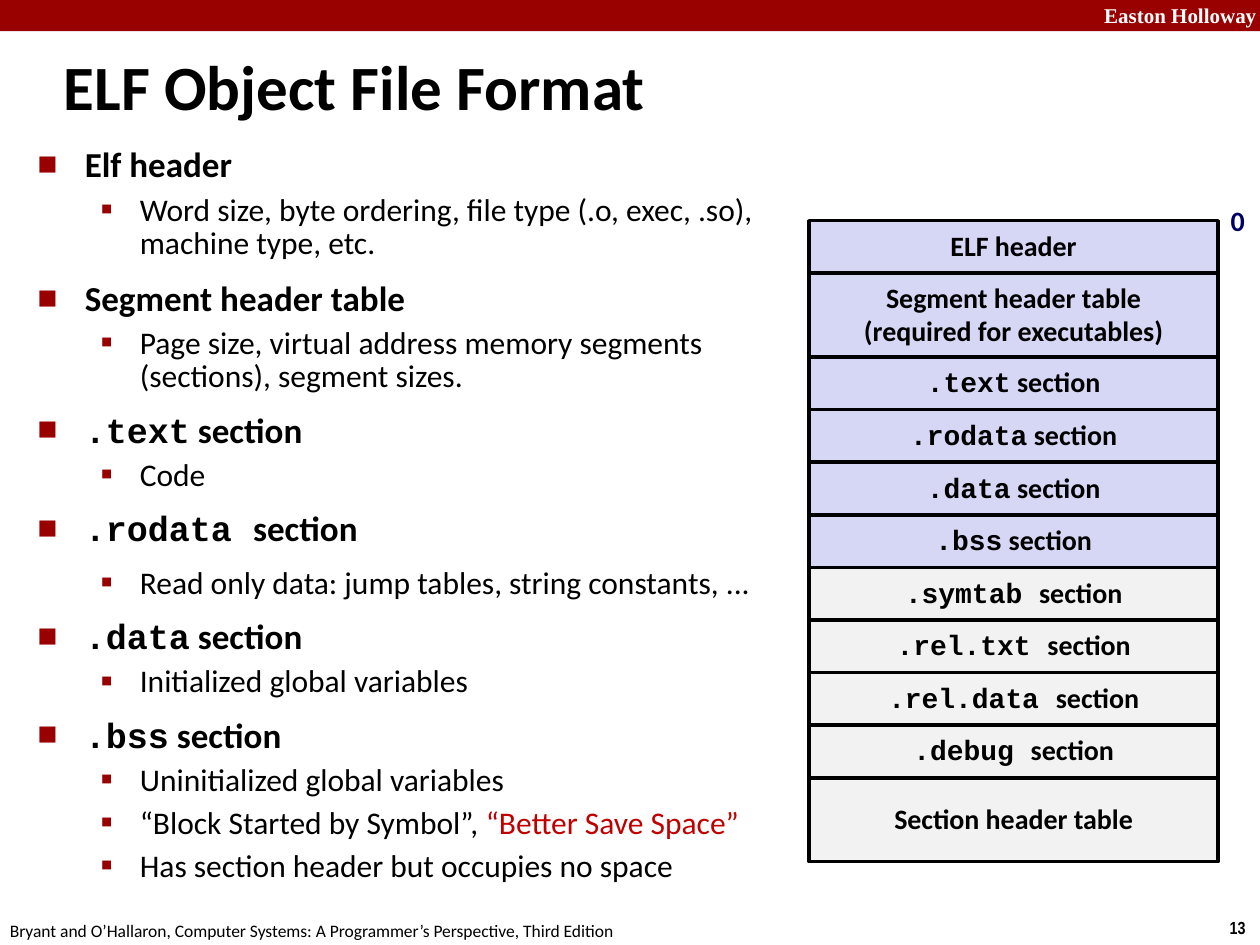
"""Build the slide on the ELF object file format."""
from lxml.etree import SubElement
from pptx import Presentation
from pptx.dml.color import RGBColor
from pptx.enum.shapes import MSO_SHAPE as Preset
from pptx.enum.text import MSO_ANCHOR as Anchor, PP_ALIGN as Align
from pptx.oxml.ns import qn
from pptx.util import Cm, Pt

CRIMSON = RGBColor(0x99, 0x00, 0x00)
ACCENT_RED = RGBColor(0xC0, 0x00, 0x00)
NAVY = RGBColor(0x00, 0x00, 0x66)
LAVENDER = RGBColor(0xD6, 0xD6, 0xF5)
PALE_GREY = RGBColor(0xF2, 0xF2, 0xF2)
BLACK = RGBColor(0x00, 0x00, 0x00)
WHITE = RGBColor(0xFF, 0xFF, 0xFF)

SANS, MONO = "Calibri", "Courier New"
SHORT_ROW, TALL_ROW = 1.06, 1.69

TOPIC = {"size": Pt(20), "bold": True}
DETAIL = {"size": Pt(18), "bold": False}
ROW_FONT = {"size": Pt(16), "bold": True}
TOPIC_BULLET = {"char": "■", "percent": 60, "margin": 0.95, "hanging": 0.95}
DETAIL_BULLET = {"char": "▪", "percent": 110, "margin": 2.06, "hanging": 0.79}
TOPIC_SPACING = {"line_spacing": 0.83, "space_before": Pt(12.5)}
CODE_SPACING = {"line_spacing": 0.8, "space_before": Pt(12.5)}
DETAIL_SPACING = {"line_spacing": 0.88, "space_before": Pt(5.6)}

OUTLINE = [
    ("", "Elf header", DETAIL_SPACING,
     ["Word size, byte ordering, file type (.o, exec, .so), machine type, etc."]),
    ("", "Segment header table", DETAIL_SPACING,
     ["Page size, virtual address memory segments (sections), segment sizes."]),
    (".text", " section", DETAIL_SPACING, ["Code"]),
    (".rodata ", "section", CODE_SPACING,
     ["Read only data: jump tables, string constants, ..."]),
    (".data", " section", DETAIL_SPACING, ["Initialized global variables"]),
    (".bss", " section", DETAIL_SPACING,
     ["Uninitialized global variables",
      "“Block Started by Symbol”, |“Better Save Space”",
      "Has section header but occupies no space"]),
]

FILE_ROWS = [
    (SHORT_ROW, LAVENDER, [("", "ELF header")]),
    (TALL_ROW, LAVENDER, [("", "Segment header table"),
                          ("", "(required for executables)")]),
    (SHORT_ROW, LAVENDER, [(".text", " section")]),
    (SHORT_ROW, LAVENDER, [(".rodata", " section")]),
    (SHORT_ROW, LAVENDER, [(".data", " section")]),
    (SHORT_ROW, LAVENDER, [(".bss", " section")]),
    (SHORT_ROW, PALE_GREY, [(".symtab ", "section")]),
    (SHORT_ROW, PALE_GREY, [(".rel.txt ", "section")]),
    (SHORT_ROW, PALE_GREY, [(".rel.data ", "section")]),
    (SHORT_ROW, PALE_GREY, [(".debug ", "section")]),
    (TALL_ROW, PALE_GREY, [("", "Section header table")]),
]


def apply_format(target, values):
    """Set each named attribute of the target."""
    for name, value in values.items():
        setattr(target, name, value)


def add_run(paragraph, text, font, color=BLACK, face=SANS):
    """Append a formatted run to a paragraph."""
    run = paragraph.add_run()
    run.text = text
    apply_format(run.font, {"name": face, **font})
    run.font.color.rgb = color


def add_label(paragraph, code, words, font):
    """Write an optional code name followed by plain words."""
    if code:
        add_run(paragraph, code, font, face=MONO)
    add_run(paragraph, words, font)


def next_paragraph(frame):
    """Return the unused first paragraph or a new one."""
    first = frame.paragraphs[0]
    return frame.add_paragraph() if first.runs else first


def set_bullet(paragraph, char, percent, margin, hanging):
    """Give a paragraph a crimson bullet and a hanging indent."""
    properties = paragraph._p.get_or_add_pPr()
    properties.set("marL", str(Cm(margin)))
    properties.set("indent", str(-Cm(hanging)))
    bullet_color = SubElement(properties, qn("a:buClr"))
    SubElement(bullet_color, qn("a:srgbClr"), val=str(CRIMSON))
    SubElement(properties, qn("a:buSzPct"), val=str(percent * 1000))
    SubElement(properties, qn("a:buFont"), typeface=SANS)
    SubElement(properties, qn("a:buChar"), char=char)


def add_frame(slide, left, top, width, height, **options):
    """Add a text box and return its text frame."""
    box = slide.shapes.add_textbox(Cm(left), Cm(top), Cm(width), Cm(height))
    apply_format(box.text_frame, {"word_wrap": True, **options})
    return box.text_frame


def add_block(slide, left, top, width, height, fill):
    """Add a filled rectangle without shadow."""
    block = slide.shapes.add_shape(
        Preset.RECTANGLE, Cm(left), Cm(top), Cm(width), Cm(height))
    block.shadow.inherit = False
    block.fill.solid()
    block.fill.fore_color.rgb = fill
    return block


def add_banner(slide, institution):
    """Add the top band with the institution name."""
    add_block(slide, 0, 0, 25.4, 0.63, CRIMSON).line.fill.background()
    frame = add_frame(slide, 21.95, -0.08, 3.63, 0.76)
    frame.paragraphs[0].alignment = Align.RIGHT
    add_run(frame.paragraphs[0], institution,
            {"size": Pt(12), "bold": True}, WHITE, "Times New Roman")


def add_outline(slide):
    """Add the bulleted topics with their details."""
    frame = add_frame(slide, 0.51, 2.9, 15.49, 14.96)
    for code, words, detail_spacing, details in OUTLINE:
        topic = next_paragraph(frame)
        apply_format(topic, CODE_SPACING if code else TOPIC_SPACING)
        set_bullet(topic, **TOPIC_BULLET)
        add_label(topic, code, words, TOPIC)
        for detail in details:
            paragraph = next_paragraph(frame)
            apply_format(paragraph, {"level": 1, **detail_spacing})
            set_bullet(paragraph, **DETAIL_BULLET)
            plain, _, accent = detail.partition("|")
            add_run(paragraph, plain, DETAIL)
            if accent:
                add_run(paragraph, accent, DETAIL, ACCENT_RED)


def add_file_layout(slide, left, top, width):
    """Stack the parts of the object file downwards."""
    for height, fill, labels in FILE_ROWS:
        row = add_block(slide, left, top, width, height, fill)
        row.line.color.rgb = BLACK
        row.line.width = Pt(2)
        apply_format(row.text_frame,
                     {"word_wrap": False, "vertical_anchor": Anchor.MIDDLE})
        for code, words in labels:
            paragraph = next_paragraph(row.text_frame)
            apply_format(paragraph, {"alignment": Align.CENTER,
                                     "line_spacing": 0.94 if code else 0.98})
            add_label(paragraph, code, words, ROW_FONT)
        top += height


def main():
    """Compose and save the slide."""
    deck = Presentation()
    apply_format(deck, {"slide_width": Cm(25.4), "slide_height": Cm(19.05)})
    slide = deck.slides.add_slide(deck.slide_layouts[6])

    add_banner(slide, "Easton Holloway")
    page_number = add_frame(slide, 24.54, 18.36, 0.86, 0.69, word_wrap=False)
    add_run(page_number.paragraphs[0], "13",
            {"size": Pt(10), "bold": True}, face="Arial Narrow")
    citation = add_frame(slide, -0.05, 18.42, 12.9, 0.69, word_wrap=False)
    add_run(citation.paragraphs[0],
            "Bryant and O’Hallaron, Computer Systems: "
            "A Programmer’s Perspective, Third Edition", {"size": Pt(10)})
    title = add_frame(slide, 1.04, 0.64, 24.21, 2.18,
                      vertical_anchor=Anchor.MIDDLE)
    add_run(title.paragraphs[0], "ELF Object File Format",
            {"size": Pt(36), "bold": True})

    add_outline(slide)
    add_file_layout(slide, 16.31, 4.45, 8.25)
    offset = add_frame(slide, 24.56, 4.02, 0.79, 0.94, word_wrap=False)
    offset.paragraphs[0].line_spacing = 0.98
    add_run(offset.paragraphs[0], "0", ROW_FONT, NAVY)

    deck.save("out.pptx")


if __name__ == "__main__":
    main()
